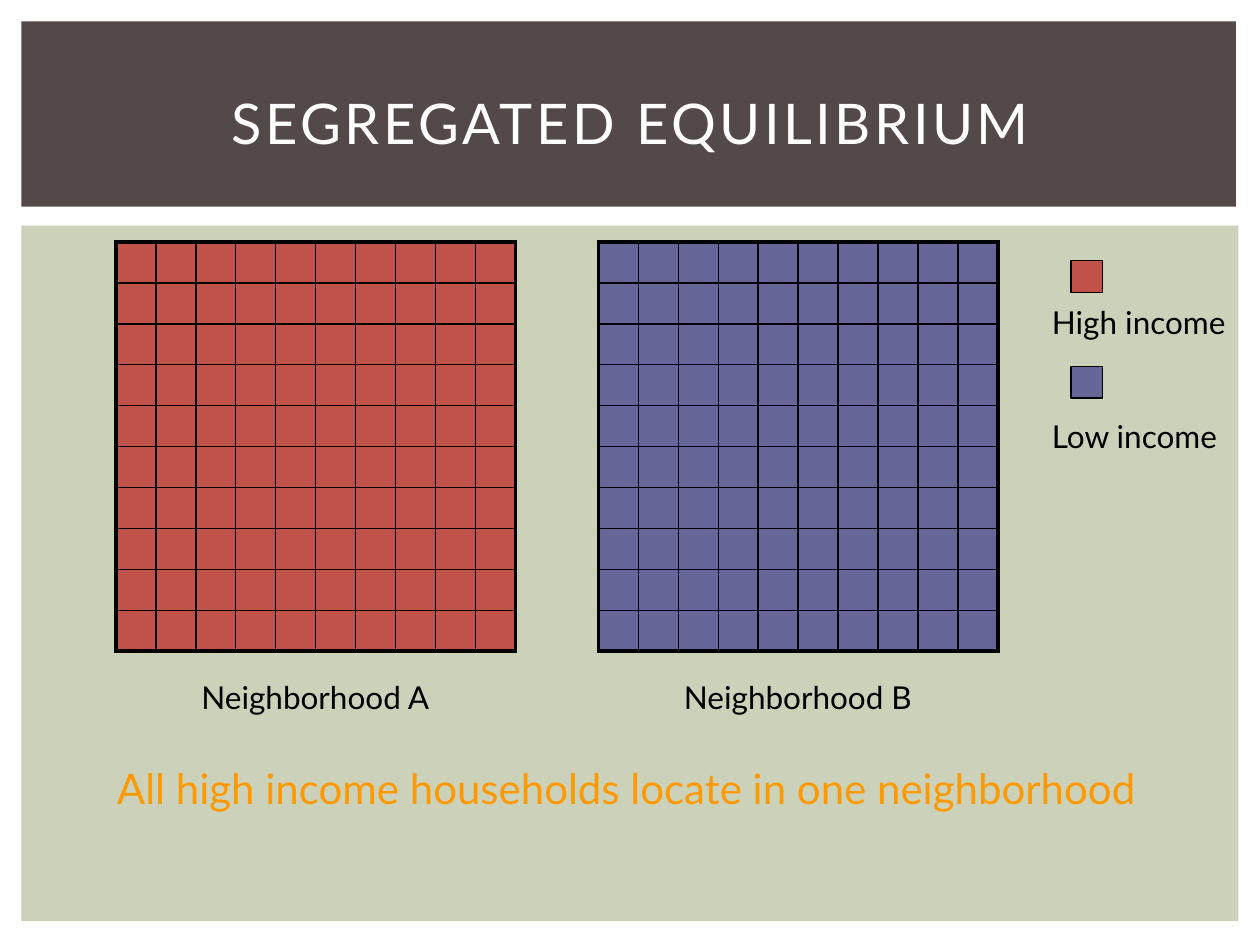
from dataclasses import dataclass
from typing import Optional

from lxml import etree
from pptx import Presentation
from pptx.dml.color import RGBColor
from pptx.enum import shapes, text
from pptx.oxml import ns
from pptx.util import Inches, Pt

FONT = "Lato"
WHITE = RGBColor(0xFF, 0xFF, 0xFF)
BLACK = RGBColor(0, 0, 0)
SAGE = RGBColor(0xCC, 0xD1, 0xB9)
BROWN = RGBColor(0x53, 0x49, 0x49)
RED = RGBColor(0xC0, 0x52, 0x4A)
BLUE = RGBColor(0x66, 0x66, 0x99)
ORANGE = RGBColor(0xFF, 0x99, 0x00)

GRID_SIZE = 10
GRID_TOP, GRID_WIDTH, GRID_HEIGHT = 1.92, 3.17, 3.25
INNER_BORDER, OUTER_BORDER = 1, 2.25


@dataclass(frozen=True)
class Box:
    left: float
    top: float
    width: float
    height: float

    def lengths(self) -> tuple:
        return tuple(Inches(v) for v in (self.left, self.top, self.width, self.height))


@dataclass(frozen=True)
class Neighborhood:
    name: str
    left: float
    color: RGBColor


@dataclass(frozen=True)
class Panel:
    box: Box
    fill: RGBColor
    line: Optional[RGBColor] = None


BACKDROPS = (
    Panel(Box(0.17, 1.79, 9.66, 5.52), SAGE),
    Panel(Box(0.17, 0.17, 9.64, 1.47), BROWN),
)
LEGEND_SWATCHES = (
    Panel(Box(8.5, 2.07, 0.25, 0.25), RED, BLACK),
    Panel(Box(8.5, 2.91, 0.25, 0.25), BLUE, BLACK),
)
NEIGHBORHOODS = (
    Neighborhood("Neighborhood A", 0.92, RED),
    Neighborhood("Neighborhood B", 4.75, BLUE),
)


def write_text(frame, content: str, *, size: float = 18, color: RGBColor = BLACK,
               align=text.PP_ALIGN.LEFT, wrap: bool = False, gap: float = 0,
               tracking: float = 0) -> None:
    frame.text = content
    frame.word_wrap = wrap
    for index, paragraph in enumerate(frame.paragraphs):
        paragraph.alignment = align
        paragraph.space_before = Pt(gap if index else 0)
        for run in paragraph.runs:
            run.font.name = FONT
            run.font.size = Pt(size)
            run.font.color.rgb = color
            if tracking:
                run.font.element.set("spc", str(int(tracking * 100))) if hasattr(
                    run.font, "element") else run._r.get_or_add_rPr().set(
                    "spc", str(int(tracking * 100)))


def add_label(slide, content: str, box: Box, **text_format) -> None:
    shape = slide.shapes.add_textbox(*box.lengths())
    write_text(shape.text_frame, content, **text_format)
    shape.text_frame.auto_size = text.MSO_AUTO_SIZE.SHAPE_TO_FIT_TEXT


def add_panel(slide, panel: Panel) -> None:
    shape = slide.shapes.add_shape(shapes.MSO_SHAPE.RECTANGLE, *panel.box.lengths())
    shape.shadow.inherit = False
    shape.fill.solid()
    shape.fill.fore_color.rgb = panel.fill
    if panel.line is None:
        shape.line.fill.background()
    else:
        shape.line.color.rgb = panel.line
        shape.line.width = Pt(0.75)


def set_borders(cell, row: int, column: int) -> None:
    last = GRID_SIZE - 1
    on_edge = {"L": column == 0, "R": column == last, "T": row == 0, "B": row == last}
    properties = cell._tc.get_or_add_tcPr()
    for side, outer in on_edge.items():
        width = Pt(OUTER_BORDER if outer else INNER_BORDER)
        line = etree.SubElement(properties, ns.qn(f"a:ln{side}"), w=str(width))
        fill = etree.SubElement(line, ns.qn("a:solidFill"))
        etree.SubElement(fill, ns.qn("a:srgbClr"), val=str(BLACK))


def add_neighborhood(slide, neighborhood: Neighborhood) -> None:
    box = Box(neighborhood.left, GRID_TOP, GRID_WIDTH, GRID_HEIGHT)
    table = slide.shapes.add_table(GRID_SIZE, GRID_SIZE, *box.lengths()).table
    table.first_row = False
    table.horz_banding = False
    for row in range(GRID_SIZE):
        for column in range(GRID_SIZE):
            cell = table.cell(row, column)
            cell.margin_left = cell.margin_right = 0
            cell.margin_top = cell.margin_bottom = 0
            set_borders(cell, row, column)
            cell.fill.solid()
            cell.fill.fore_color.rgb = neighborhood.color
    add_label(slide, neighborhood.name, Box(neighborhood.left + 0.58, 5.33, 2.01, 0.4))


def place_title(slide, content: str, box: Box) -> None:
    title = slide.shapes.title
    title.left, title.top, title.width, title.height = box.lengths()
    frame = title.text_frame
    write_text(frame, content, size=32, color=WHITE, align=text.PP_ALIGN.CENTER,
               wrap=True, tracking=2)
    frame.vertical_anchor = text.MSO_ANCHOR.MIDDLE
    frame.auto_size = text.MSO_AUTO_SIZE.NONE
    title.element.getparent().append(title.element)


def main() -> None:
    presentation = Presentation()
    presentation.slide_width = Inches(10)
    presentation.slide_height = Inches(7.5)
    slide = presentation.slides.add_slide(presentation.slide_layouts.get_by_name("Title Only"))

    for backdrop in BACKDROPS:
        add_panel(slide, backdrop)
    add_label(slide, "High income\nLow income", Box(8.25, 2.36, 1.59, 1.3), gap=43.5)
    place_title(slide, "SEGREGATED EQUILIBRIUM", Box(0.42, 0.39, 9.17, 1.15))
    for neighborhood in NEIGHBORHOODS:
        add_neighborhood(slide, neighborhood)
    add_label(slide, "All high income households locate in one neighborhood",
              Box(0.83, 6, 8.58, 0.5), size=24, color=ORANGE, wrap=True)
    for swatch in LEGEND_SWATCHES:
        add_panel(slide, swatch)

    presentation.save("out.pptx")


if __name__ == "__main__":
    main()
